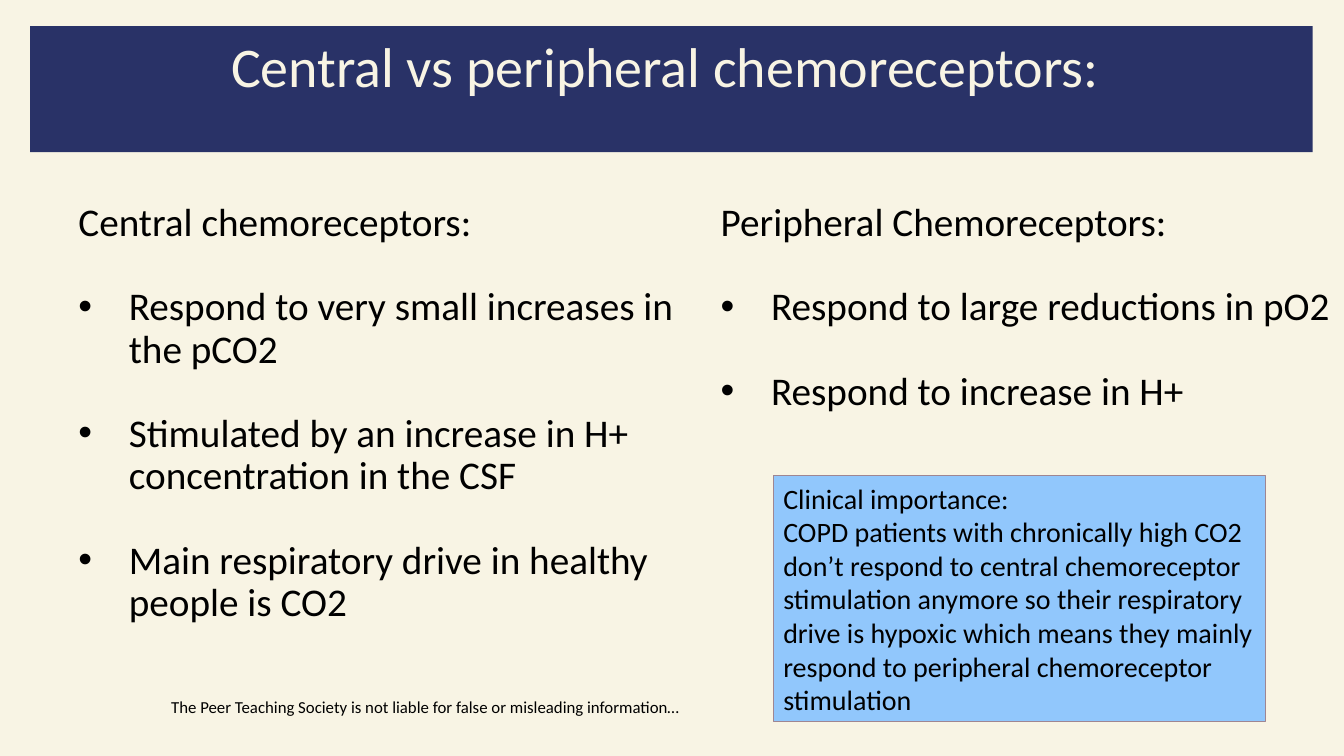
from dataclasses import dataclass

from lxml.etree import SubElement
from pptx import Presentation
from pptx.dml.color import RGBColor
from pptx.enum.shapes import MSO_SHAPE as Preset
from pptx.enum.text import MSO_ANCHOR as Anchor, MSO_AUTO_SIZE as AutoSize, PP_ALIGN as Align
from pptx.oxml.ns import qn
from pptx.shapes.autoshape import Shape
from pptx.slide import Slide
from pptx.text.text import TextFrame
from pptx.util import Inches, Pt


@dataclass(frozen=True)
class Theme:
    font: str = "Calibri"
    cream: RGBColor = RGBColor(0xF8, 0xF4, 0xE4)
    navy: RGBColor = RGBColor(0x29, 0x32, 0x67)
    sky: RGBColor = RGBColor(0x91, 0xC7, 0xFC)
    mauve: RGBColor = RGBColor(0x9F, 0x86, 0x92)
    black: RGBColor = RGBColor(0, 0, 0)
    title_size: int = 40
    body_size: int = 28
    note_size: int = 20
    disclaimer_size: int = 12


@dataclass(frozen=True)
class Box:
    left: float
    top: float
    width: float
    height: float

    def lengths(self) -> tuple[int, int, int, int]:
        return Inches(self.left), Inches(self.top), Inches(self.width), Inches(self.height)


@dataclass(frozen=True)
class Column:
    left: float
    heading: str
    points: tuple[str, ...]


THEME = Theme()
TITLE = "Central vs peripheral chemoreceptors: "
TITLE_BOX = Box(0.3, 0.26, 12.72, 1.25)
NOTE_BOX = Box(7.67, 4.72, 4.88, 2.44)
DISCLAIMER_BOX = Box(1.6, 6.86, 5.54, 0.3)
COLUMNS = (
    Column(0.3, "Central chemoreceptors:", (
        "Respond to very small increases in the pCO2",
        "Stimulated by an increase in H+ concentration in the CSF",
        "Main respiratory drive in healthy people is CO2",
    )),
    Column(6.67, "Peripheral Chemoreceptors:", (
        "Respond to large reductions in pO2",
        "Respond to increase in H+",
    )),
)
CLINICAL_NOTE = (
    "Clinical importance:",
    "COPD patients with chronically high CO2 don’t respond to central chemoreceptor "
    "stimulation anymore so their respiratory drive is hypoxic which means they mainly "
    "respond to peripheral chemoreceptor stimulation",
)
DISCLAIMER = "The Peer Teaching Society is not liable for false or misleading information…"


def write(frame: TextFrame, text: str, *, size: int, color: RGBColor = THEME.black,
          align: Align = Align.LEFT, line_spacing: float = 1.0, space_before: float = 0,
          indent: float = 0, hanging: float = 0, bullet: bool = False) -> None:
    paragraph = frame.paragraphs[0]
    if paragraph.runs:
        paragraph = frame.add_paragraph()
    paragraph.alignment = align
    paragraph.line_spacing = line_spacing
    paragraph.space_before = Pt(space_before)
    run = paragraph.add_run()
    run.text = text
    run.font.name = THEME.font
    run.font.size = Pt(size)
    run.font.color.rgb = color
    properties = paragraph._p.get_or_add_pPr()
    properties.set("marL", str(Inches(indent)))
    properties.set("indent", str(Inches(-hanging)))
    if bullet:
        SubElement(properties, qn("a:buFont"), typeface="Arial")
        SubElement(properties, qn("a:buChar"), char="•")


def set_frame(shape: Shape, *, vertical: float = 0.05, anchor: Anchor = Anchor.TOP) -> TextFrame:
    frame = shape.text_frame
    frame.word_wrap = True
    frame.auto_size = AutoSize.NONE
    frame.vertical_anchor = anchor
    frame.margin_left = frame.margin_right = Inches(0.1)
    frame.margin_top = frame.margin_bottom = Inches(vertical)
    return frame


def fill_shape(shape: Shape, color: RGBColor) -> None:
    shape.fill.solid()
    shape.fill.fore_color.rgb = color


def draw_title(slide: Slide) -> None:
    title = slide.shapes.title
    title.left, title.top, title.width, title.height = TITLE_BOX.lengths()
    fill_shape(title, THEME.navy)
    write(set_frame(title), TITLE, size=THEME.title_size, color=THEME.cream, align=Align.CENTER)


def draw_column(slide: Slide, column: Column) -> None:
    box = Box(column.left, 1.91, 6.85, 4.95)
    frame = set_frame(slide.shapes.add_textbox(*box.lengths()), vertical=0.1)
    write(frame, column.heading, size=THEME.body_size, line_spacing=0.9, indent=0.38)
    for point in column.points:
        write(frame, point, size=THEME.body_size, line_spacing=0.9, space_before=30,
              indent=0.88, hanging=0.5, bullet=True)


def draw_disclaimer(slide: Slide) -> None:
    frame = set_frame(slide.shapes.add_textbox(*DISCLAIMER_BOX.lengths()))
    write(frame, DISCLAIMER, size=THEME.disclaimer_size)


def draw_clinical_note(slide: Slide) -> None:
    note = slide.shapes.add_shape(Preset.RECTANGLE, *NOTE_BOX.lengths())
    note.shadow.inherit = False
    fill_shape(note, THEME.sky)
    note.line.color.rgb = THEME.mauve
    note.line.width = Pt(1)
    frame = set_frame(note, anchor=Anchor.MIDDLE)
    for text in CLINICAL_NOTE:
        write(frame, text, size=THEME.note_size)


def main() -> None:
    presentation = Presentation()
    presentation.slide_width = Inches(13.33)
    presentation.slide_height = Inches(7.5)
    slide = presentation.slides.add_slide(presentation.slide_layouts.get_by_name("Title Only"))
    slide.background.fill.solid()
    slide.background.fill.fore_color.rgb = THEME.cream
    draw_title(slide)
    for column in COLUMNS:
        draw_column(slide, column)
    draw_disclaimer(slide)
    draw_clinical_note(slide)
    presentation.save("out.pptx")


if __name__ == "__main__":
    main()
